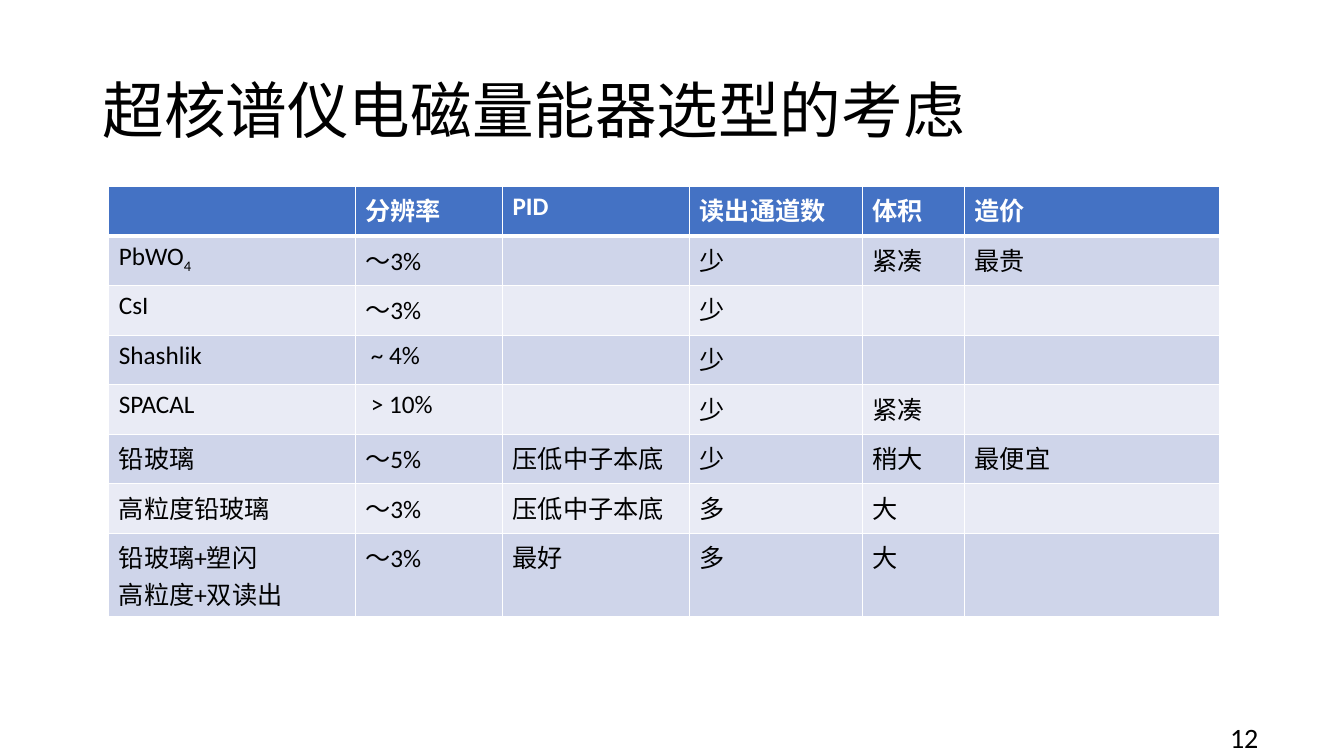
from dataclasses import dataclass

from lxml import etree
from pptx import Presentation
from pptx.dml.color import RGBColor
from pptx.enum import text
from pptx.oxml import ns
from pptx.util import Pt

# Content
TITLE = "超核谱仪电磁量能器选型的考虑"
PAGE_NUMBER = "12"
ROWS = [
    ("", "分辨率", "PID", "读出通道数", "体积", "造价"),
    (("PbWO", "4"), "～3%", "", "少", "紧凑", "最贵"),
    ("CsI", "～3%", "", "少", "", ""),
    ("Shashlik", " ~ 4%", "", "少", "", ""),
    ("SPACAL", " > 10%", "", "少", "紧凑", ""),
    ("铅玻璃", "～5%", "压低中子本底", "少", "稍大", "最便宜"),
    ("高粒度铅玻璃", "～3%", "压低中子本底", "多", "大", ""),
    ("铅玻璃+塑闪\n高粒度+双读出", "～3%", "最好", "多", "大", ""),
]
COLUMN_WIDTHS = (176, 105.3, 133.6, 123.5, 73, 182)
ROW_HEIGHT = 35.4


@dataclass(frozen=True)
class Theme:
    font: str = "Calibri"
    ink: str = "000000"
    white: str = "FFFFFF"
    header: str = "4472C4"
    bands: tuple = ("CFD5EA", "E9EBF5")
    title_size: float = 44
    cell_size: float = 18
    number_size: float = 20


THEME = Theme()


def style(para, size, color=THEME.ink, bold=False):
    font = para.font
    font.name, font.size, font.bold = THEME.font, Pt(size), bold
    font.color.rgb = RGBColor.from_string(color)


def add_borders(cell, bottom):
    properties = cell._tc.get_or_add_tcPr()
    widths = {"lnL": 1, "lnR": 1, "lnT": 1, "lnB": bottom}
    for index, (side, width) in enumerate(widths.items()):
        line = etree.Element(ns.qn(f"a:{side}"), w=str(Pt(width)))
        fill = etree.SubElement(line, ns.qn("a:solidFill"))
        etree.SubElement(fill, ns.qn("a:srgbClr"), val=THEME.white)
        properties.insert(index, line)


def fill_cell(cell, content, row):
    is_header = row == 0
    color = THEME.header if is_header else THEME.bands[(row - 1) % 2]
    cell.fill.solid()
    cell.fill.fore_color.rgb = RGBColor.from_string(color)
    add_borders(cell, 3 if is_header else 1)
    if isinstance(content, tuple):
        base, subscript = content
        para = cell.text_frame.paragraphs[0]
        para.add_run().text = base
        span = para.add_run()
        span.text = subscript
        span.font._element.set("baseline", "-25000")
    else:
        cell.text_frame.text = content
    for para in cell.text_frame.paragraphs:
        style(para, THEME.cell_size, THEME.white if is_header else THEME.ink, is_header)


def main():
    deck = Presentation()
    deck.slide_width, deck.slide_height = Pt(960), Pt(540)
    page = deck.slides.add_slide(deck.slide_layouts[5])

    # Title
    title = page.shapes.title
    title.left, title.top, title.width, title.height = Pt(66), Pt(28.75), Pt(828), Pt(104.4)
    title.text_frame.text = TITLE
    title.text_frame.vertical_anchor = text.MSO_ANCHOR.MIDDLE
    para = title.text_frame.paragraphs[0]
    para.alignment, para.line_spacing = text.PP_ALIGN.LEFT, 0.9
    style(para, THEME.title_size)

    # Comparison table
    table = page.shapes.add_table(
        len(ROWS), len(COLUMN_WIDTHS), Pt(77.7), Pt(133.3),
        Pt(sum(COLUMN_WIDTHS)), Pt(ROW_HEIGHT * len(ROWS)),
    ).table
    for column, width in zip(table.columns, COLUMN_WIDTHS):
        column.width = Pt(width)
    for row, contents in enumerate(ROWS):
        table.rows[row].height = Pt(ROW_HEIGHT)
        for column, content in enumerate(contents):
            fill_cell(table.cell(row, column), content, row)

    # Page number
    box = page.shapes.add_textbox(Pt(690), Pt(512.5), Pt(216), Pt(28.75))
    box.text_frame.word_wrap = True
    box.text_frame.vertical_anchor = text.MSO_ANCHOR.MIDDLE
    para = box.text_frame.paragraphs[0]
    para.text, para.alignment = PAGE_NUMBER, text.PP_ALIGN.RIGHT
    style(para, THEME.number_size)

    deck.save("out.pptx")


if __name__ == "__main__":
    main()
